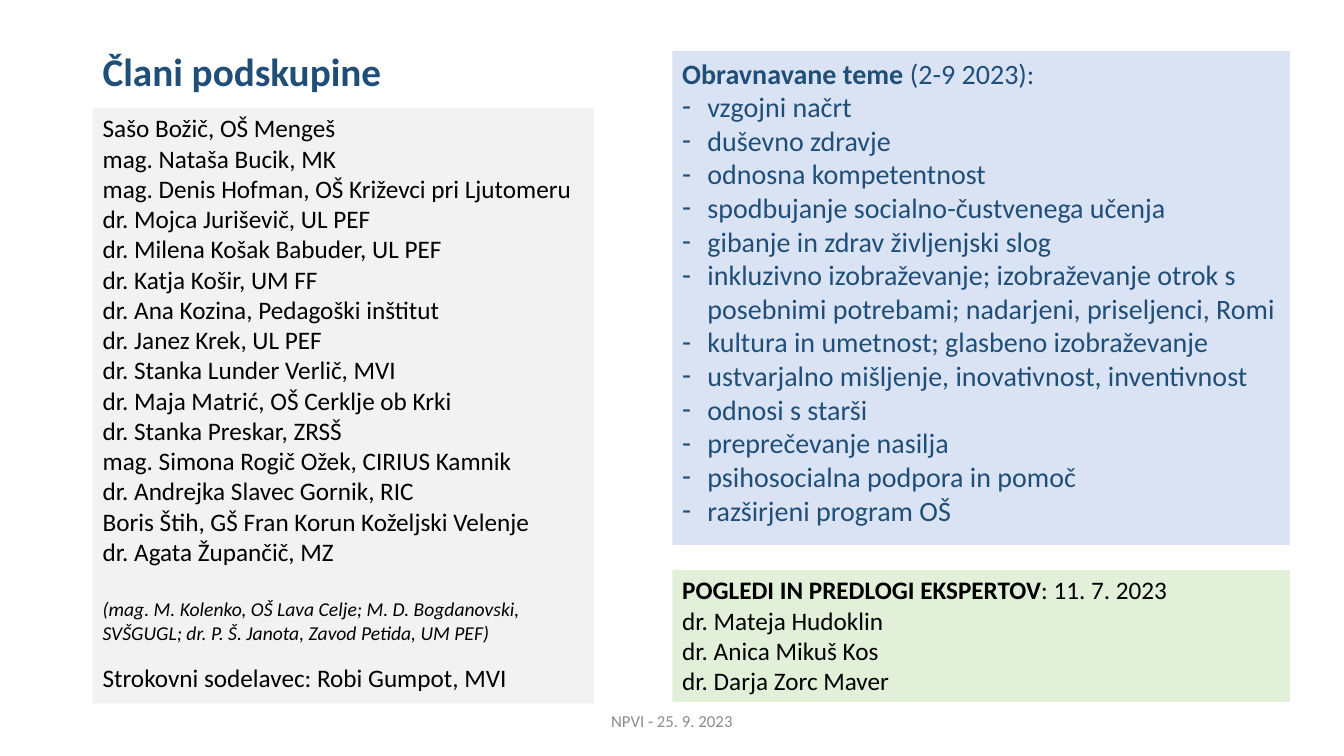
from dataclasses import dataclass

from lxml.etree import SubElement
from pptx import Presentation
from pptx.dml.color import RGBColor as Rgb
from pptx.enum.shapes import MSO_SHAPE as Preset
from pptx.enum.text import MSO_ANCHOR as Anchor, PP_ALIGN as Align
from pptx.oxml.ns import qn
from pptx.util import Pt


@dataclass(frozen=True)
class Theme:
    font: str = "Calibri"
    ink: str = "000000"
    navy: str = "1F4E79"
    muted: str = "8C8C8C"
    grey_panel: str = "F2F2F2"
    blue_panel: str = "DAE3F3"
    green_panel: str = "E2F0D9"
    title: int = 28
    topic: int = 20
    body: int = 18
    note: int = 14
    footer: int = 12


THEME = Theme()
LEFT_EDGE = 66.24
RIGHT_EDGE, RIGHT_WIDTH = 480.25, 441.25

MEMBERS = [
    "Sašo Božič, OŠ Mengeš",
    "mag. Nataša Bucik, MK",
    "mag. Denis Hofman, OŠ Križevci pri Ljutomeru",
    "dr. Mojca Juriševič, UL PEF",
    "dr. Milena Košak Babuder, UL PEF",
    "dr. Katja Košir, UM FF",
    "dr. Ana Kozina, Pedagoški inštitut",
    "dr. Janez Krek, UL PEF",
    "dr. Stanka Lunder Verlič, MVI",
    "dr. Maja Matrić, OŠ Cerklje ob Krki",
    "dr. Stanka Preskar, ZRSŠ",
    "mag. Simona Rogič Ožek, CIRIUS Kamnik",
    "dr. Andrejka Slavec Gornik, RIC",
    "Boris Štih, GŠ Fran Korun Koželjski Velenje",
    "dr. Agata Župančič, MZ",
]
FORMER_MEMBERS = (
    "(mag. M. Kolenko, OŠ Lava Celje; M. D. Bogdanovski, SVŠGUGL; "
    "dr. P. Š. Janota, Zavod Petida, UM PEF)"
)
TOPICS = [
    "vzgojni načrt",
    "duševno zdravje",
    "odnosna kompetentnost",
    "spodbujanje socialno-čustvenega učenja",
    "gibanje in zdrav življenjski slog",
    "inkluzivno izobraževanje; izobraževanje otrok s posebnimi potrebami; "
    "nadarjeni, priseljenci, Romi",
    "kultura in umetnost; glasbeno izobraževanje",
    "ustvarjalno mišljenje, inovativnost, inventivnost",
    "odnosi s starši",
    "preprečevanje nasilja",
    "psihosocialna podpora in pomoč",
    "razširjeni program OŠ",
]
EXPERTS = ["dr. Mateja Hudoklin", "dr. Anica Mikuš Kos", "dr. Darja Zorc Maver"]


def add_panel(slide, left, top, width, height, fill):
    panel = slide.shapes.add_shape(
        Preset.RECTANGLE, Pt(left), Pt(top), Pt(width), Pt(height)
    )
    panel.shadow.inherit = False
    panel.fill.solid()
    panel.fill.fore_color.rgb = Rgb.from_string(fill)
    panel.line.fill.background()
    panel.text_frame.word_wrap = True
    panel.text_frame.vertical_anchor = Anchor.TOP
    return panel.text_frame


def add_label(slide, left, top, width, height):
    label = slide.shapes.add_textbox(Pt(left), Pt(top), Pt(width), Pt(height))
    label.text_frame.word_wrap = True
    label.text_frame.vertical_anchor = Anchor.MIDDLE
    return label.text_frame


def add_line(frame, align=Align.LEFT, before=0):
    first = frame.paragraphs[0]
    line = frame.add_paragraph() if first.runs else first
    line.alignment = align
    line.space_before = Pt(before)
    return line


def add_run(line, text, size, color=THEME.ink, bold=False, italic=False):
    run = line.add_run()
    run.text = text
    run.font.name = THEME.font
    run.font.size = Pt(size)
    run.font.bold = bold
    run.font.italic = italic
    run.font.color.rgb = Rgb.from_string(color)


def add_bullet(line, mark="‐", indent=18):
    properties = line._p.get_or_add_pPr()
    properties.set("marL", str(Pt(indent)))
    properties.set("indent", str(-Pt(indent)))
    SubElement(properties, qn("a:buFont"), typeface=THEME.font)
    SubElement(properties, qn("a:buChar"), char=mark)


def add_members(slide):
    members = add_panel(slide, LEFT_EDGE, 77, 358, 425.5, THEME.grey_panel)
    for member in MEMBERS:
        add_run(add_line(members), member, THEME.body)
    add_run(add_line(members, before=22), FORMER_MEMBERS, THEME.note, italic=True)
    associate = add_line(members, before=13.2)
    add_run(associate, "Strokovni sodelavec: Robi Gumpot, MVI", THEME.body)


def add_topics(slide):
    topics = add_panel(slide, RIGHT_EDGE, 36.5, RIGHT_WIDTH, 352.8, THEME.blue_panel)
    heading = add_line(topics)
    add_run(heading, "Obravnavane teme ", THEME.topic, THEME.navy, bold=True)
    add_run(heading, "(2-9 2023):", THEME.topic, THEME.navy)
    for topic in TOPICS:
        line = add_line(topics)
        add_bullet(line)
        add_run(line, topic, THEME.topic, THEME.navy)


def add_experts(slide):
    experts = add_panel(slide, RIGHT_EDGE, 407, RIGHT_WIDTH, 94.3, THEME.green_panel)
    heading = add_line(experts)
    add_run(heading, "POGLEDI IN PREDLOGI EKSPERTOV", THEME.body, bold=True)
    add_run(heading, ": 11. 7. 2023", THEME.body)
    for expert in EXPERTS:
        add_run(add_line(experts), expert, THEME.body)


def add_title(slide):
    title = add_line(add_label(slide, LEFT_EDGE, 28.8, 828, 48.2))
    title.line_spacing = 0.9
    add_run(title, "Člani podskupine", THEME.title, THEME.navy, bold=True)


def add_footer(slide):
    footer = add_line(add_label(slide, 318, 500.5, 324, 28.8), Align.CENTER)
    add_run(footer, "NPVI - 25. 9. 2023", THEME.footer, THEME.muted)


def main():
    deck = Presentation()
    deck.slide_width, deck.slide_height = Pt(960), Pt(540)
    slide = deck.slides.add_slide(deck.slide_layouts[6])
    add_members(slide)
    add_topics(slide)
    add_title(slide)
    add_experts(slide)
    add_footer(slide)
    deck.save("out.pptx")


if __name__ == "__main__":
    main()
